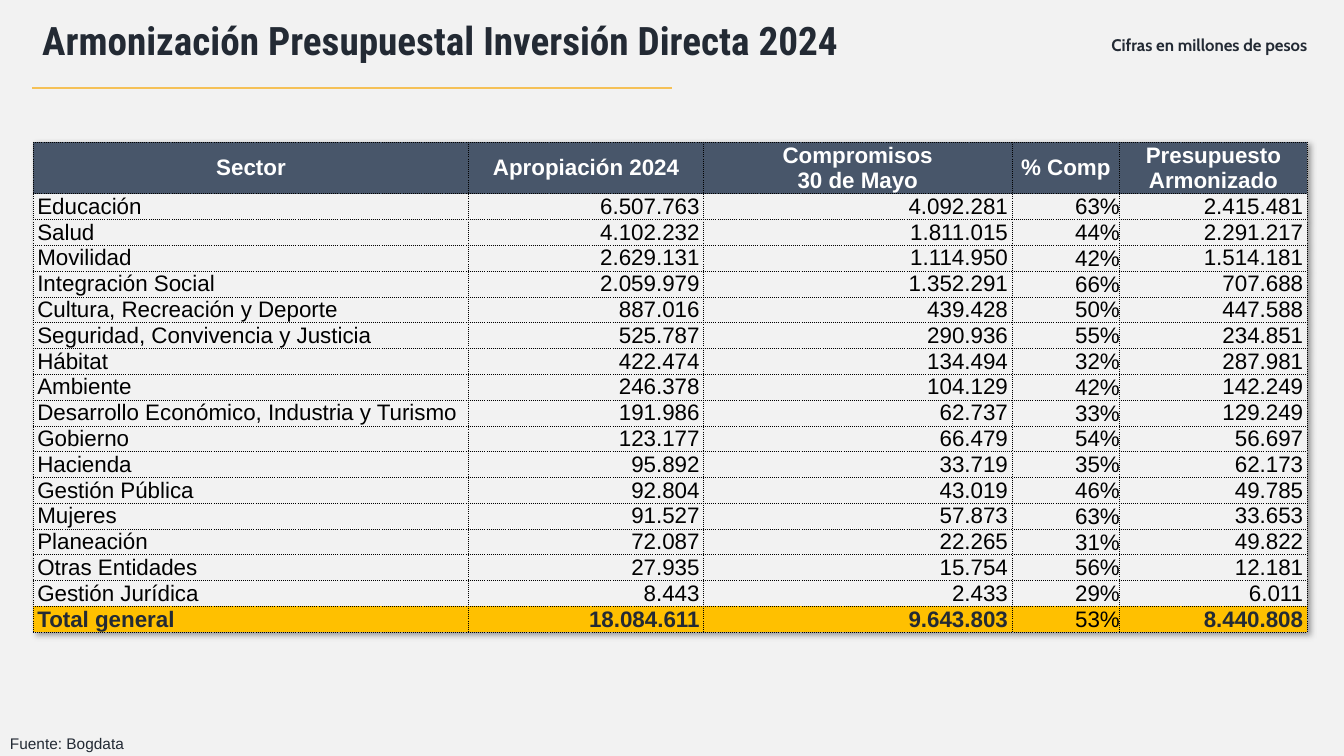
from dataclasses import dataclass

from lxml import etree
from pptx import Presentation
from pptx.dml.color import RGBColor
from pptx.enum.shapes import MSO_CONNECTOR
from pptx.enum.text import MSO_ANCHOR, MSO_AUTO_SIZE, PP_ALIGN
from pptx.oxml import parse_xml
from pptx.oxml.ns import nsdecls, qn
from pptx.util import Cm, Pt

LEFT, CENTER, RIGHT = PP_ALIGN.LEFT, PP_ALIGN.CENTER, PP_ALIGN.RIGHT
TOP, MIDDLE, BOTTOM = MSO_ANCHOR.TOP, MSO_ANCHOR.MIDDLE, MSO_ANCHOR.BOTTOM
NO_AUTOFIT = MSO_AUTO_SIZE.NONE
STRAIGHT = MSO_CONNECTOR.STRAIGHT
TITLE_ONLY = 5


@dataclass(frozen=True)
class Theme:
    background: str = "F2F2F2"
    ink: str = "232A34"
    body: str = "000000"
    white: str = "FFFFFF"
    header: str = "48566A"
    total: str = "FFC000"
    rule: str = "F5C157"
    title_font: str = "Roboto Condensed"
    note_font: str = "Cabin"
    table_font: str = "Arial"
    title_size: int = 28
    table_size: int = 16
    note_size: int = 12
    source_size: int = 11


THEME = Theme()
COLUMN_WIDTHS = (10.97, 5.92, 7.77, 2.72, 4.72)
HEADER_HEIGHT, ROW_HEIGHT = 1.3, 0.65
PERCENT_COLUMN = 3
HEADINGS = ("Sector", "Apropiación 2024", "Compromisos\n30 de Mayo", "% Comp",
            "Presupuesto Armonizado")
SECTORS = (
    ("Educación", "6.507.763", "4.092.281", "63%", "2.415.481"),
    ("Salud", "4.102.232", "1.811.015", "44%", "2.291.217"),
    ("Movilidad", "2.629.131", "1.114.950", "42%", "1.514.181"),
    ("Integración Social", "2.059.979", "1.352.291", "66%", "707.688"),
    ("Cultura, Recreación y Deporte", "887.016", "439.428", "50%", "447.588"),
    ("Seguridad, Convivencia y Justicia", "525.787", "290.936", "55%", "234.851"),
    ("Hábitat", "422.474", "134.494", "32%", "287.981"),
    ("Ambiente", "246.378", "104.129", "42%", "142.249"),
    ("Desarrollo Económico, Industria y Turismo", "191.986", "62.737", "33%", "129.249"),
    ("Gobierno", "123.177", "66.479", "54%", "56.697"),
    ("Hacienda", "95.892", "33.719", "35%", "62.173"),
    ("Gestión Pública", "92.804", "43.019", "46%", "49.785"),
    ("Mujeres", "91.527", "57.873", "63%", "33.653"),
    ("Planeación", "72.087", "22.265", "31%", "49.822"),
    ("Otras Entidades", "27.935", "15.754", "56%", "12.181"),
    ("Gestión Jurídica", "8.443", "2.433", "29%", "6.011"),
)
TOTAL = ("Total general", "18.084.611", "9.643.803", "53%", "8.440.808")


def write_text(frame, text, *, font=THEME.table_font, size=THEME.table_size,
               color=THEME.ink, bold=False, align=LEFT, spacing=None):
    """Fill a text frame, one paragraph per line of text."""
    for index, line in enumerate(text.split("\n")):
        para = frame.add_paragraph() if index else frame.paragraphs[0]
        para.alignment = align
        if spacing:
            para.line_spacing = spacing
        span = para.add_run()
        span.text = line
        span.font.name = font
        span.font.size = Pt(size)
        span.font.bold = bold
        span.font.color.rgb = RGBColor.from_string(color)


def add_title(page, text):
    title = page.shapes.title
    title.left, title.top, title.width, title.height = Cm(0.81), Cm(0), Cm(31.52), Cm(2.18)
    frame = title.text_frame
    frame.auto_size = NO_AUTOFIT
    frame.vertical_anchor = MIDDLE
    write_text(frame, text, font=THEME.title_font, size=THEME.title_size,
               bold=True, spacing=0.9)


def add_label(page, text, left, top, width, height, **text_format):
    box = page.shapes.add_textbox(Cm(left), Cm(top), Cm(width), Cm(height))
    box.text_frame.word_wrap = True
    box.text_frame.vertical_anchor = TOP
    write_text(box.text_frame, text, **text_format)


def add_rule(page, left, right, top):
    rule = page.shapes.add_connector(STRAIGHT, Cm(left), Cm(top), Cm(right), Cm(top))
    rule.line.color.rgb = RGBColor.from_string(THEME.rule)
    rule.line.width = Pt(1.5)
    etree.SubElement(rule._element.spPr, qn("a:effectLst"))


def dot_borders(cell):
    properties = cell._tc.get_or_add_tcPr()
    for side in ("lnL", "lnR", "lnT", "lnB"):
        properties.append(parse_xml(
            f'<a:{side} {nsdecls("a")} w="6350"><a:solidFill>'
            f'<a:srgbClr val="{THEME.body}"/></a:solidFill>'
            f'<a:prstDash val="dot"/></a:{side}>'))


def add_table_shadow(table):
    table._tbl.tblPr.insert(0, parse_xml(
        f'<a:effectLst {nsdecls("a")}><a:outerShdw blurRad="50800" dist="38100" '
        'dir="2700000" algn="tl" rotWithShape="0"><a:srgbClr val="000000">'
        '<a:alpha val="40000"/></a:srgbClr></a:outerShdw></a:effectLst>'))


def fill_cell(cell, text, fill, *, flush=False, **text_format):
    """Format one cell; a flush cell has no side margins and sits at the bottom."""
    dot_borders(cell)
    cell.fill.solid()
    cell.fill.fore_color.rgb = RGBColor.from_string(fill)
    cell.margin_left = cell.margin_right = Cm(0 if flush else 0.1)
    cell.margin_top = cell.margin_bottom = Cm(0)
    cell.vertical_anchor = BOTTOM if flush else MIDDLE
    write_text(cell.text_frame, text, **text_format)


def add_budget_table(page, left, top):
    rows = (HEADINGS, *SECTORS, TOTAL)
    height = HEADER_HEIGHT + ROW_HEIGHT * (len(rows) - 1)
    table = page.shapes.add_table(len(rows), len(COLUMN_WIDTHS), Cm(left), Cm(top),
                                  Cm(sum(COLUMN_WIDTHS)), Cm(height)).table
    add_table_shadow(table)
    for column, width in zip(table.columns, COLUMN_WIDTHS):
        column.width = Cm(width)
    for row_index, values in enumerate(rows):
        is_header, is_total = values is HEADINGS, values is TOTAL
        table.rows[row_index].height = Cm(HEADER_HEIGHT if is_header else ROW_HEIGHT)
        for column_index, text in enumerate(values):
            cell = table.cell(row_index, column_index)
            if is_header:
                fill_cell(cell, text, THEME.header, color=THEME.white, bold=True, align=CENTER)
                continue
            is_percent = column_index == PERCENT_COLUMN
            strong = is_total and not is_percent
            fill_cell(cell, text, THEME.total if is_total else THEME.background,
                      flush=is_percent, bold=strong,
                      color=THEME.ink if strong else THEME.body,
                      align=RIGHT if column_index else LEFT)


def main():
    deck = Presentation()
    deck.slide_width, deck.slide_height = Cm(33.87), Cm(19.05)
    page = deck.slides.add_slide(deck.slide_layouts[TITLE_ONLY])
    page.background.fill.solid()
    page.background.fill.fore_color.rgb = RGBColor.from_string(THEME.background)
    add_budget_table(page, 0.84, 3.58)
    add_label(page, "Fuente: Bogdata", 0, 18.42, 5.89, 0.63,
              size=THEME.source_size, spacing=0.9)
    add_label(page, "Cifras en millones de pesos", 27.1, 0.74, 6.76, 0.76,
              font=THEME.note_font, size=THEME.note_size, bold=True, align=CENTER)
    add_title(page, "Armonización Presupuestal Inversión Directa 2024")
    add_rule(page, 0.81, 16.94, 2.21)
    deck.save("out.pptx")


if __name__ == "__main__":
    main()
